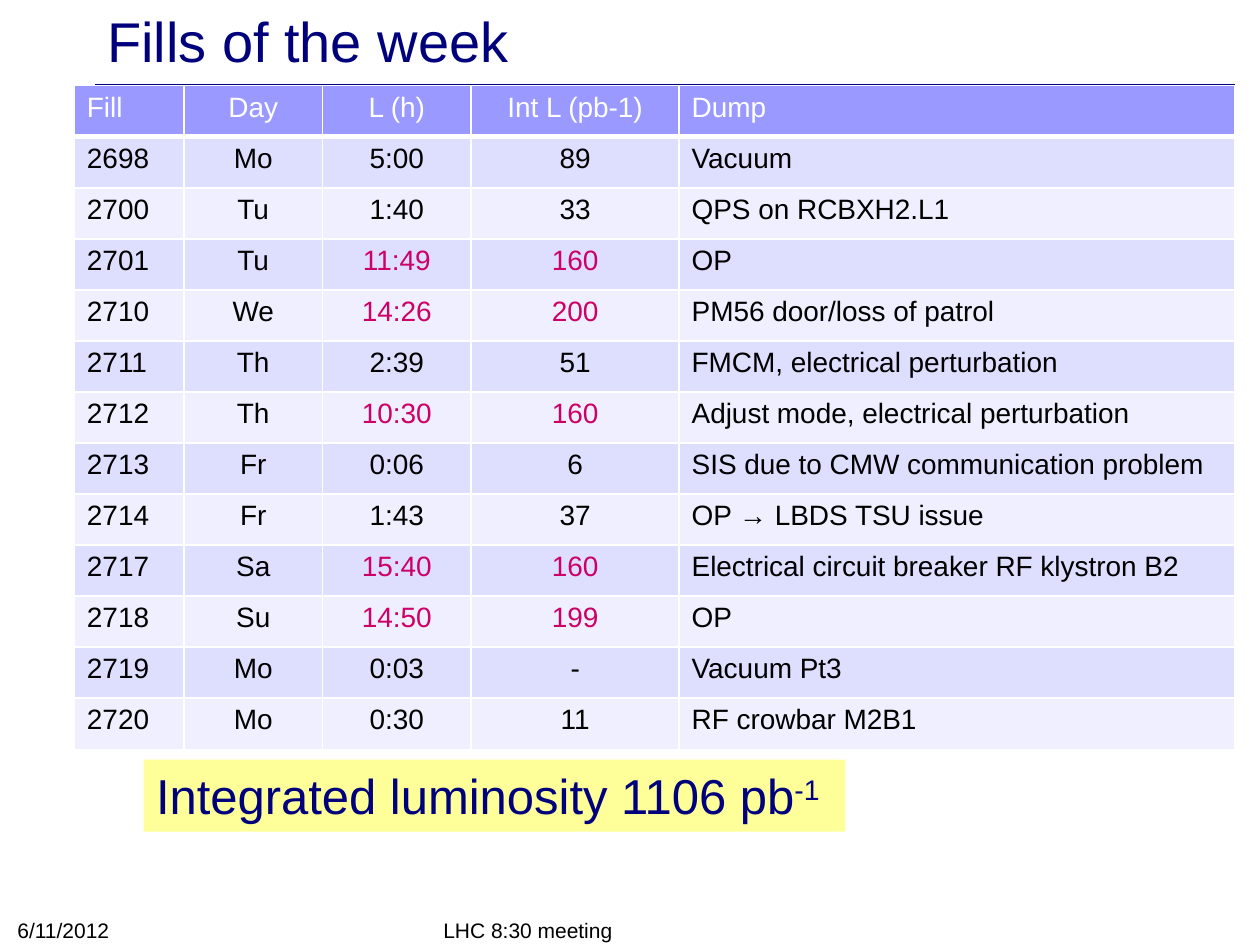
import pptx
import pptx.util
import pptx.dml.color
import pptx.enum.shapes
import pptx.enum.text
import pptx.oxml
from dataclasses import dataclass
from lxml import etree

Inches = pptx.util.Inches
Align = pptx.enum.text.PP_ALIGN
Anchor = pptx.enum.text.MSO_ANCHOR


@dataclass(frozen=True)
class Theme:
    font: str = "Arial"
    navy: str = "00007D"
    black: str = "000000"
    white: str = "FFFFFF"
    long_fill: str = "CC0066"
    header: str = "9999FF"
    bands: tuple = ("DEDEFF", "EFEFFF")
    highlight: str = "FFFF99"
    title_size: int = 32
    total_size: int = 28
    table_size: int = 16
    footer_size: int = 12


theme = Theme()


def rgb(color):
    return pptx.dml.color.RGBColor.from_string(color)


def add_run(paragraph, text, size, color):
    run = paragraph.add_run()
    run.text = text
    run.font.name = theme.font
    run.font.size = pptx.util.Pt(size)
    run.font.color.rgb = rgb(color)
    return run


prs = pptx.Presentation()
prs.slide_width, prs.slide_height = Inches(10), Inches(7.5)
slide = prs.slides.add_slide(prs.slide_layouts[5])

title = slide.shapes.title
title.left, title.top = Inches(0.75), Inches(0.03)
title.width, title.height = Inches(9), Inches(0.57)
title.text_frame.vertical_anchor = Anchor.MIDDLE
title.text_frame.paragraphs[0].alignment = Align.LEFT
add_run(title.text_frame.paragraphs[0], "Fills of the week", theme.title_size, theme.navy)

title_rule = slide.shapes.add_connector(
    pptx.enum.shapes.MSO_CONNECTOR.STRAIGHT,
    Inches(0.75), Inches(0.68), Inches(9.8), Inches(0.68))
title_rule.line.color.rgb = rgb(theme.navy)
title_rule.line.width = pptx.util.Pt(2)
etree.SubElement(title_rule._element.spPr, pptx.oxml.ns.qn("a:effectLst"))

fills = [
    ("Fill", "Day", "L (h)", "Int L (pb-1)", "Dump"),
    ("2698", "Mo", "5:00", "89", "Vacuum"),
    ("2700", "Tu", "1:40", "33", "QPS on RCBXH2.L1"),
    ("2701", "Tu", "11:49", "160", "OP"),
    ("2710", "We", "14:26", "200", "PM56 door/loss of patrol"),
    ("2711", "Th", "2:39", "51", "FMCM, electrical perturbation"),
    ("2712", "Th", "10:30", "160", "Adjust mode, electrical perturbation"),
    ("2713", "Fr", "0:06", "6", "SIS due to CMW communication problem"),
    ("2714", "Fr", "1:43", "37", "OP → LBDS TSU issue"),
    ("2717", "Sa", "15:40", "160", "Electrical circuit breaker RF klystron B2"),
    ("2718", "Su", "14:50", "199", "OP"),
    ("2719", "Mo", "0:03", "-", "Vacuum Pt3"),
    ("2720", "Mo", "0:30", "11", "RF crowbar M2B1"),
]
long_fills = {"2701", "2710", "2712", "2717", "2718"}
column_widths = [0.87, 1.1, 1.18, 1.65, 4.41]
centred_columns = {1, 2, 3}
highlighted_columns = {2, 3}

fill_table = slide.shapes.add_table(
    len(fills), len(column_widths),
    Inches(0.59), Inches(0.68), Inches(9.21), Inches(5.27)).table
for column, width in zip(fill_table.columns, column_widths):
    column.width = Inches(width)

for r, record in enumerate(fills):
    for c, value in enumerate(record):
        cell = fill_table.cell(r, c)
        borders = {"L": 1, "R": 1, "T": 3 if r == 1 else 1, "B": 3 if r == 0 else 1}
        for side, points in borders.items():
            cell._tc.get_or_add_tcPr().append(pptx.oxml.parse_xml(
                f'<a:ln{side} {pptx.oxml.ns.nsdecls("a")} w="{pptx.util.Pt(points)}">'
                f'<a:solidFill><a:srgbClr val="{theme.white}"/></a:solidFill></a:ln{side}>'))
        cell.fill.solid()
        cell.fill.fore_color.rgb = rgb(theme.bands[(r - 1) % 2] if r else theme.header)
        if r == 0:
            color = theme.white
        elif record[0] in long_fills and c in highlighted_columns:
            color = theme.long_fill
        else:
            color = theme.black
        paragraph = cell.text_frame.paragraphs[0]
        paragraph.alignment = Align.CENTER if c in centred_columns else Align.LEFT
        add_run(paragraph, value, theme.table_size, color).font.bold = False

footers = [
    ("LHC 8:30 meeting", 3.42, 7.25, 3.17, 0.28),
    ("6/11/2012", 0.04, 7.24, 2.33, 0.29),
]
for text, left, top, width, height in footers:
    footer = slide.shapes.add_textbox(Inches(left), Inches(top), Inches(width), Inches(height))
    footer.text_frame.word_wrap = True
    footer.text_frame.vertical_anchor = Anchor.BOTTOM
    add_run(footer.text_frame.paragraphs[0], text, theme.footer_size, theme.black)

total = slide.shapes.add_shape(
    pptx.enum.shapes.MSO_SHAPE.RECTANGLE,
    Inches(1.14), Inches(6.03), Inches(5.57), Inches(0.57))
total.shadow.inherit = False
total.fill.solid()
total.fill.fore_color.rgb = rgb(theme.highlight)
total.line.fill.background()
total.text_frame.word_wrap = False
total.text_frame.auto_size = pptx.enum.text.MSO_AUTO_SIZE.SHAPE_TO_FIT_TEXT
total.text_frame.vertical_anchor = Anchor.TOP
total_line = total.text_frame.paragraphs[0]
total_line.alignment = Align.LEFT
add_run(total_line, "Integrated luminosity 1106 pb", theme.total_size, theme.navy)
exponent = add_run(total_line, "-1", theme.total_size, theme.navy)
exponent._r.get_or_add_rPr().set("baseline", "30000")

prs.save("out.pptx")
